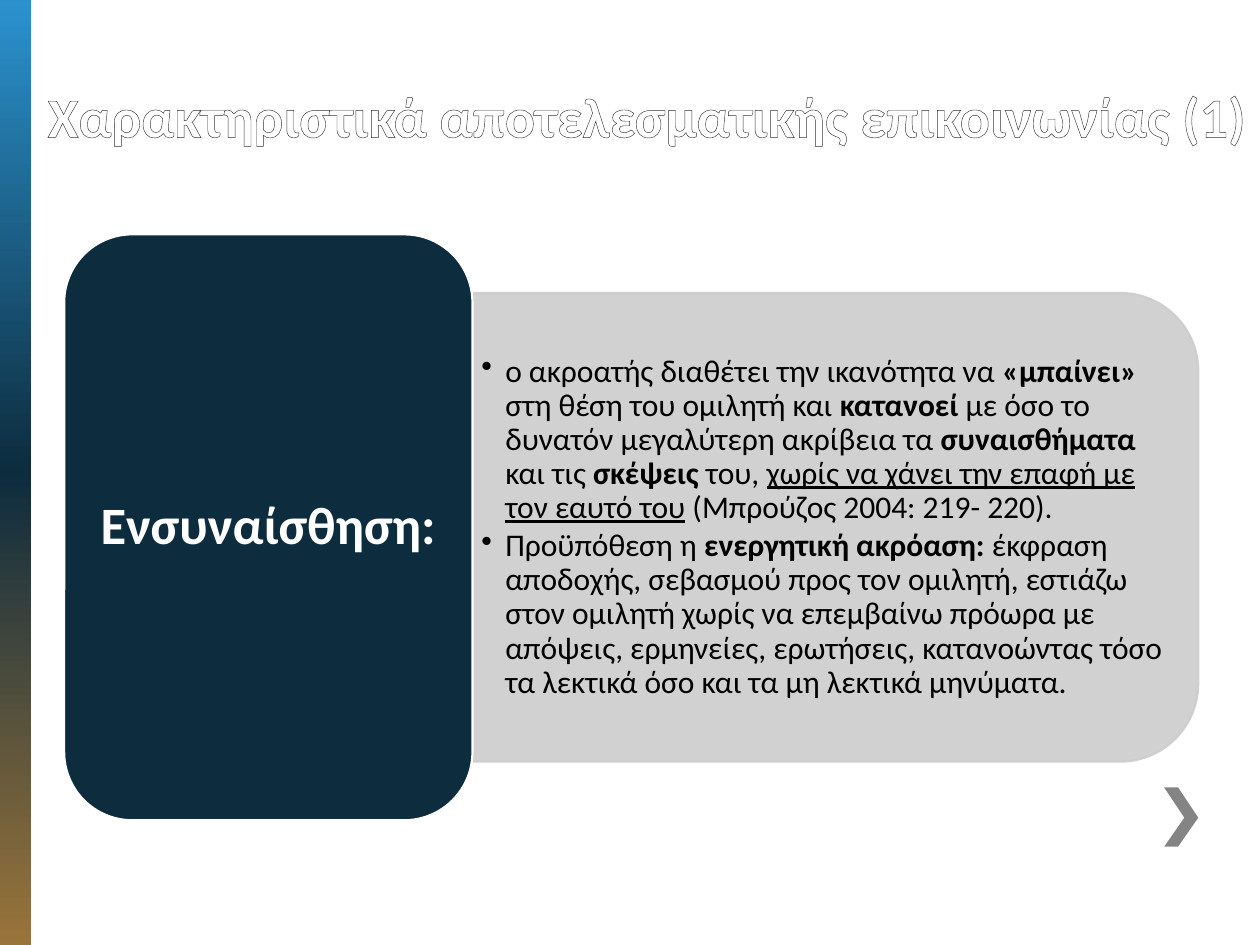
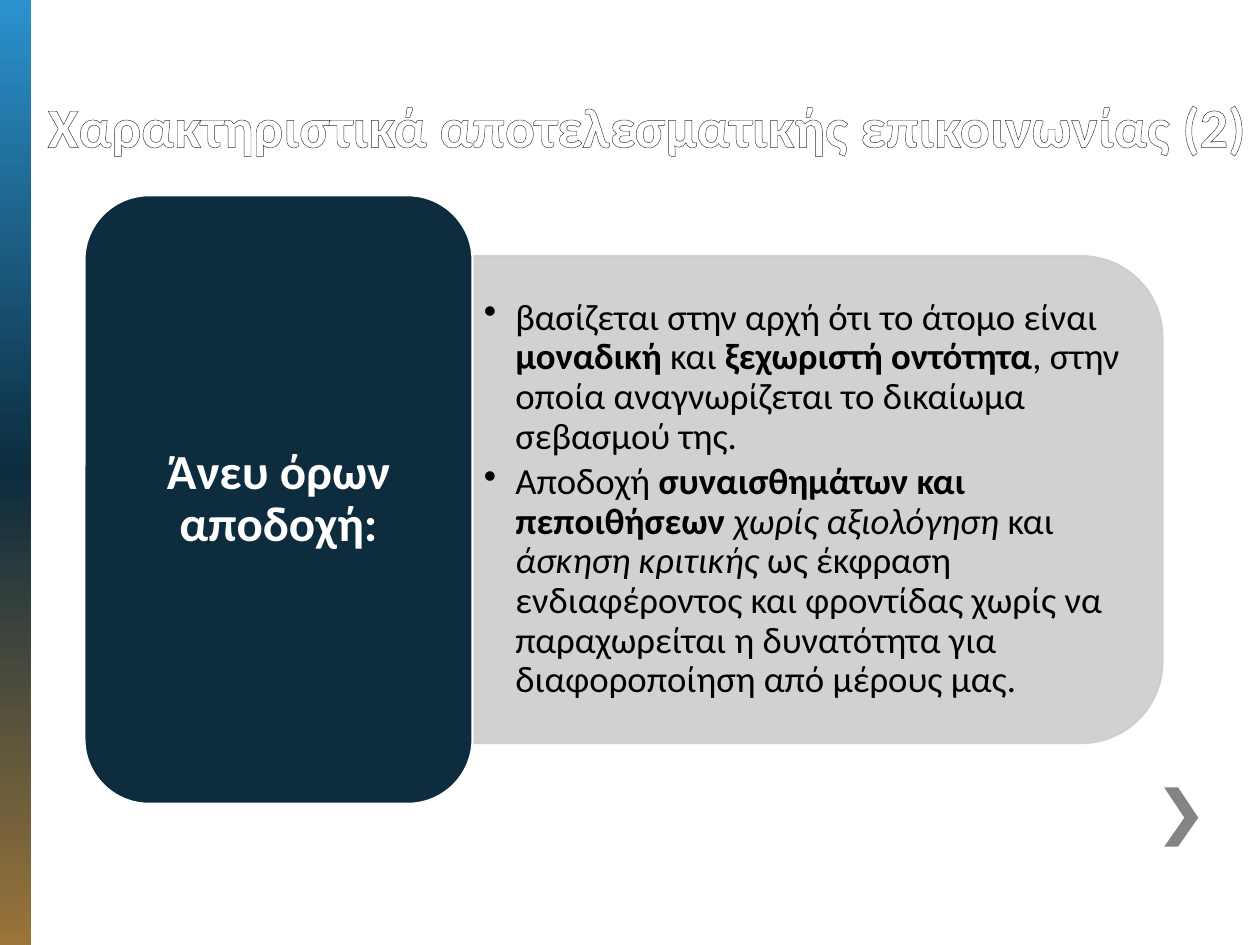
from lxml import etree
from pptx import Presentation
from pptx.dml.color import RGBColor as RGB
from pptx.enum.shapes import MSO_SHAPE as SHAPE
from pptx.enum.text import MSO_ANCHOR as ANCHOR, PP_ALIGN as ALIGN
from pptx.oxml.ns import qn
from pptx.util import Inches, Pt

COLORS = {
    "sky": "2B92CE", "navy": "0D2C3E", "bronze": "9A743A",
    "panel": "CCCDCE", "arrow": "848484", "outline": "323232",
    "white": "FFFFFF", "black": "000000",
}
FONT = "Calibri"
COLS, ROWS = 100, 75
CORNER_PAD = 0.0488
CARD_LEFT_EDGE_OF_PANEL = 37.5

SLIDES = [
    dict(
        title="Χαρακτηριστικά αποτελεσματικής επικοινωνίας (1)", title_rows=6.5,
        label="Ενσυναίσθηση:", label_size=30,
        card=(5.1, 18.6, 32.4, 46.5), size=18, indent=1.9, inset=0.7,
        points=[
            [("ο ακροατής διαθέτει την ικανότητα να ", ""), ("«μπαίνει» ", "b"),
             ("στη θέση του ομιλητή και ", ""), ("κατανοεί", "b"),
             (" με όσο το δυνατόν μεγαλύτερη ακρίβεια τα ", ""),
             ("συναισθήματα ", "b"), ("και τις ", ""), ("σκέψεις ", "b"),
             ("του, ", ""), ("χωρίς να χάνει την επαφή με τον εαυτό του", "u"),
             (" (Μπρούζος 2004: 219- 220).", "")],
            [("Προϋπόθεση η ", ""), ("ενεργητική ακρόαση: ", "b"),
             ("έκφραση αποδοχής, σεβασμού προς τον ομιλητή, εστιάζω στον "
              "ομιλητή χωρίς να επεμβαίνω πρόωρα με απόψεις, ερμηνείες, "
              "ερωτήσεις, κατανοώντας τόσο τα λεκτικά όσο και τα μη λεκτικά "
              "μηνύματα.", "")],
        ],
    ),
    dict(
        title="Χαρακτηριστικά αποτελεσματικής επικοινωνίας (2)", title_rows=7.3,
        label="Άνευ όρων αποδοχή:", label_size=28,
        card=(6.7, 15.5, 30.8, 48.3), size=21, indent=2.5, inset=0.9,
        points=[
            [("βασίζεται στην αρχή ότι το άτομο είναι ", ""), ("μοναδική ", "b"),
             ("και", ""), (" ξεχωριστή οντότητα", "b"),
             (", στην οποία αναγνωρίζεται το δικαίωμα σεβασμού της.", "")],
            [("Αποδοχή ", ""), ("συναισθημάτων και πεποιθήσεων ", "b"),
             ("χωρίς αξιολόγηση ", "i"), ("και ", ""), ("άσκηση κριτικής ", "i"),
             ("ως έκφραση ενδιαφέροντος και φροντίδας χωρίς να παραχωρείται η "
              "δυνατότητα για διαφοροποίηση από μέρους μας.", "")],
        ],
    ),
]


def sub(parent, tag, **attrs):
    return etree.SubElement(parent, qn(tag), {k: str(v) for k, v in attrs.items()})


def shrink(box, pad):
    x, y, w, h = box
    return x, y + pad, w - pad, h - 2 * pad


class Deck:
    def __init__(self):
        self.prs = Presentation()
        self.prs.slide_width, self.prs.slide_height = Inches(10), Inches(7.5)
        self.slide = None

    def x(self, cols):
        return int(self.prs.slide_width * cols / COLS)

    def y(self, rows):
        return int(self.prs.slide_height * rows / ROWS)

    def place(self, box):
        x, y, w, h = box
        return self.x(x), self.y(y), self.x(w), self.y(h)

    def new_slide(self):
        self.slide = self.prs.slides.add_slide(self.prs.slide_layouts[6])
        self.band((0, 0, 2.5, ROWS), ["sky", "navy", "bronze"])
        self.chevron()

    def paint(self, sp, fill, line=None, alpha=None):
        sp.shadow.inherit = False
        sp.fill.solid()
        sp.fill.fore_color.rgb = RGB.from_string(COLORS[fill])
        if line:
            sp.line.color.rgb = RGB.from_string(COLORS[line])
            sp.line.width = Pt(1.25)
        else:
            sp.line.fill.background()
        if alpha:
            for clr in sp._element.spPr.iter(qn("a:srgbClr")):
                sub(clr, "a:alpha", val=alpha * 1000)

    def shape(self, kind, box, fill, line=None, alpha=None):
        sp = self.slide.shapes.add_shape(kind, *self.place(box))
        self.paint(sp, fill, line, alpha)
        return sp

    def band(self, box, stops):
        sp = self.shape(SHAPE.RECTANGLE, box, stops[0])
        solid = sp._element.spPr.find(qn("a:solidFill"))
        grad = etree.Element(qn("a:gradFill"), rotWithShape="1")
        gs_list = sub(grad, "a:gsLst")
        for i, name in enumerate(stops):
            gs = sub(gs_list, "a:gs", pos=i * 100000 // (len(stops) - 1))
            sub(gs, "a:srgbClr", val=COLORS[name])
        sub(grad, "a:lin", ang=90 * 60000, scaled=0)
        solid.getparent().replace(solid, grad)

    def chevron(self):
        pts = [(93.5, 62.5), (92.4, 62.5), (94, 64.9), (92.4, 67.2),
               (93.5, 67.2), (95.1, 64.9)]
        pts = [(self.x(c), self.y(r)) for c, r in pts]
        fb = self.slide.shapes.build_freeform(*pts[0], scale=1.0)
        fb.add_line_segments(pts[1:], close=True)
        self.paint(fb.convert_to_shape(), "arrow")

    def panel(self, box):
        x, y, w, h = box
        turned = (x + (w - h) / 2, y + (h - w) / 2, h, w)
        sp = self.shape(SHAPE.ROUND_2_SAME_RECTANGLE, turned, "panel", "panel", 90)
        sp.rotation = 90

    def text_box(self, box, anchor, inset=(1, 0.5)):
        tf = self.slide.shapes.add_textbox(*self.place(box)).text_frame
        tf.word_wrap = True
        tf.vertical_anchor = anchor
        tf.margin_left = tf.margin_right = self.x(inset[0])
        tf.margin_top = tf.margin_bottom = self.y(inset[1])
        return tf

    def style(self, r, size, color, marks=""):
        f = r.font
        f.name, f.size = FONT, Pt(size)
        f.color.rgb = RGB.from_string(COLORS[color])
        f.bold, f.italic, f.underline = (m in marks for m in "biu")

    def space(self, p, size, after):
        p.line_spacing = 0.9
        p.space_after = Pt(size * after)

    def title(self, text, rows):
        tf = self.text_box((2.8, 5.8, 97.2, rows), ANCHOR.BOTTOM)
        tf.text = text
        r = tf.paragraphs[0].runs[0]
        self.style(r, 32, "white", "b")
        ln = etree.Element(qn("a:ln"), w=str(Pt(1)))
        sub(sub(ln, "a:solidFill"), "a:srgbClr", val=COLORS["outline"])
        r._r.get_or_add_rPr().insert(0, ln)

    def card(self, box, text, size):
        self.shape(SHAPE.ROUNDED_RECTANGLE, box, "navy", "white")
        x, y, w, h = box
        pad = w * CORNER_PAD
        inner = (x + pad, y + pad, w - 2 * pad, h - 2 * pad)
        tf = self.text_box(inner, ANCHOR.MIDDLE, (1.2, 0.6))
        tf.text = text
        p = tf.paragraphs[0]
        p.alignment = ALIGN.CENTER
        self.space(p, size, 0.35)
        self.style(p.runs[0], size, "white", "b")

    def bullets(self, box, points, size, indent, inset):
        tf = self.text_box(box, ANCHOR.MIDDLE, (inset, 0.4))
        for i, runs in enumerate(points):
            p = tf.add_paragraph() if i else tf.paragraphs[0]
            self.space(p, size, 0.15)
            pPr = p._p.get_or_add_pPr()
            pPr.set("marL", str(self.x(indent)))
            pPr.set("indent", str(-self.x(indent)))
            sub(pPr, "a:buChar", char="•")
            for text, marks in runs:
                r = p.add_run()
                r.text = text
                self.style(r, size, "black", marks)

    def trait(self, title, title_rows, label, label_size, card, size, indent,
              inset, points):
        self.new_slide()
        self.title(title, title_rows)
        _, y, w, h = card
        panel = (CARD_LEFT_EDGE_OF_PANEL, y + h * 0.1, w * 16 / 9, h * 0.8)
        self.panel(panel)
        self.bullets(shrink(panel, panel[3] * CORNER_PAD), points, size, indent, inset)
        self.card(card, label, label_size)


def main():
    deck = Deck()
    for content in SLIDES:
        deck.trait(**content)
    deck.prs.save("out.pptx")


if __name__ == "__main__":
    main()
